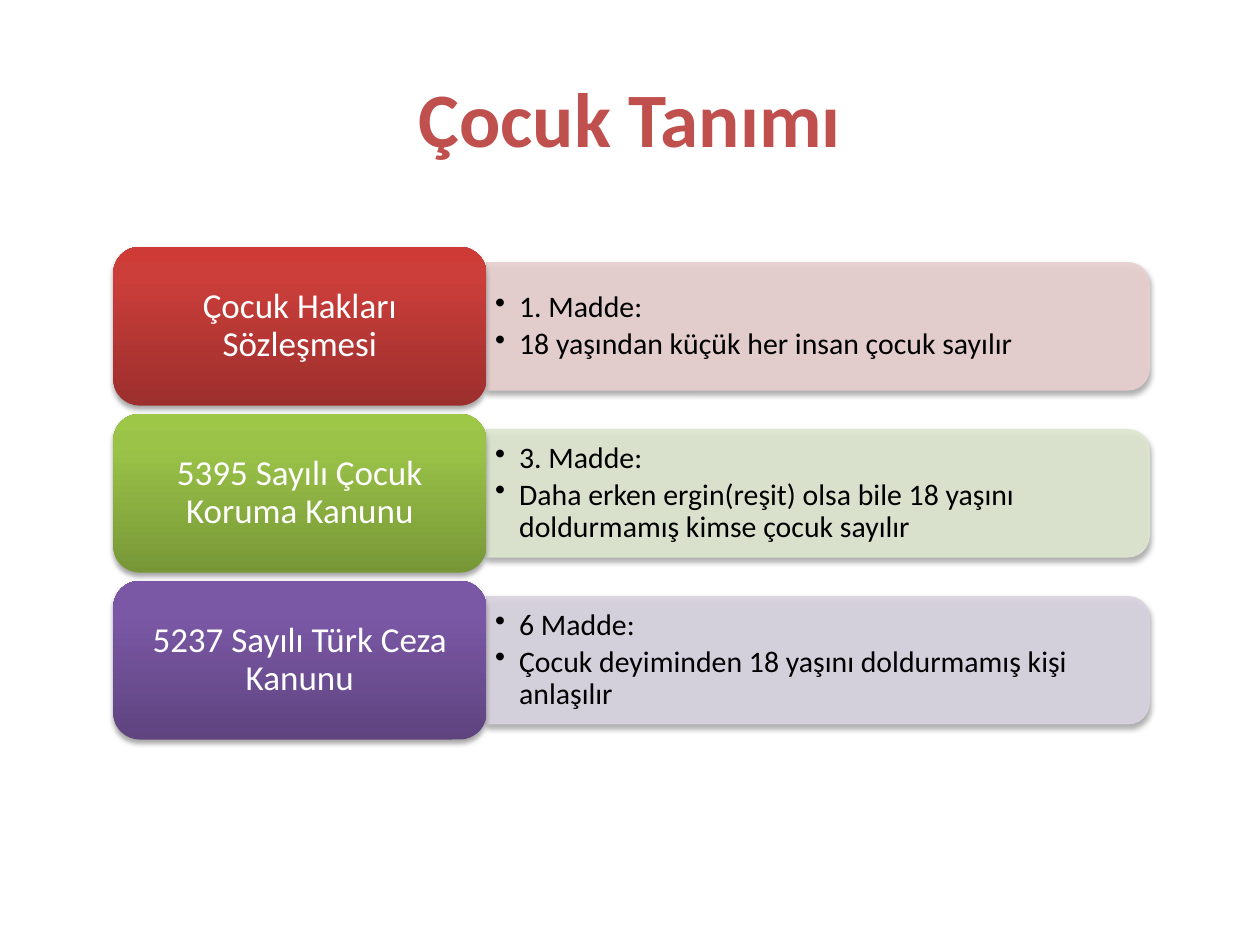
import pptx
import pptx.util
import pptx.dml.color
import pptx.enum.shapes
import pptx.enum.text
import pptx.oxml
import pptx.oxml.ns
import copy
from lxml import etree

Inches, Pt = pptx.util.Inches, pptx.util.Pt
SHAPES = pptx.enum.shapes.MSO_SHAPE
ALIGN = pptx.enum.text.PP_ALIGN
MIDDLE = pptx.enum.text.MSO_ANCHOR.MIDDLE
qn = pptx.oxml.ns.qn

TITLE = "Çocuk Tanımı"
LAWS = [
    {"name": "Çocuk Hakları Sözleşmesi",
     "points": ["1. Madde:", "18 yaşından küçük her insan çocuk sayılır"],
     "gradient": ["9C2F2D", "CB3E3A", "CE3B37"], "tint": "E8D0D0"},
    {"name": "5395 Sayılı Çocuk Koruma Kanunu",
     "points": ["3. Madde:",
                "Daha erken ergin(reşit) olsa bile 18 yaşını doldurmamış kimse çocuk sayılır"],
     "gradient": ["779737", "9BC348", "9DC746"], "tint": "DEE7D1"},
    {"name": "5237 Sayılı Türk Ceza Kanunu",
     "points": ["6 Madde:", "Çocuk deyiminden 18 yaşını doldurmamış kişi anlaşılır"],
     "gradient": ["5F4480", "7B58A6", "7C57A8"], "tint": "D8D3E0"},
]
THEME = {"font": "Calibri", "title": "C0504D", "label": "FFFFFF", "body": "000000",
         "title_size": 44, "label_size": 20, "body_size": 17,
         "stops": [0, 0.8, 1], "tint_alpha": 90}

LEFT, TOP, PITCH = 0.9, 1.96, 1.325
LABEL_W, LABEL_H = 2.96, 1.26
BAR_W, BAR_H = 5.26, 1.01
POINTS_W, POINTS_H = 5.22, 0.91


def rgb(value):
    return pptx.dml.color.RGBColor.from_string(value)


def add_run(para, text, role, bold=None):
    span = para.add_run()
    span.text = text
    span.font.name = THEME["font"]
    span.font.size = Pt(THEME[role + "_size"])
    span.font.color.rgb = rgb(THEME[role])
    span.font.bold = bold


def set_frame(frame, side_inset):
    frame.word_wrap = True
    frame.vertical_anchor = MIDDLE
    frame.margin_left = frame.margin_right = Inches(side_inset)
    frame.margin_top = frame.margin_bottom = Inches(0.04)


def add_shadow(shape):
    shape.shadow.inherit = False
    effects = shape._element.spPr.find(qn("a:effectLst"))
    shadow = etree.SubElement(effects, qn("a:outerShdw"), blurRad=str(Pt(3.1)),
                              dist=str(Pt(1.8)), dir="5400000", rotWithShape="0")
    color = etree.SubElement(shadow, qn("a:srgbClr"), val="000000")
    etree.SubElement(color, qn("a:alpha"), val="35000")


def add_bar(page, middle, tint):
    """Add a bar rounded at its right end: a top-rounded shape turned by 90 degrees."""
    center = LEFT + LABEL_W + BAR_W / 2
    bar = page.shapes.add_shape(SHAPES.ROUND_2_SAME_RECTANGLE,
                                Inches(center - BAR_H / 2), Inches(middle - BAR_W / 2),
                                Inches(BAR_H), Inches(BAR_W))
    bar.rotation = 90
    bar.fill.solid()
    bar.fill.fore_color.rgb = rgb(tint)
    bar.line.color.rgb = rgb(tint)
    bar.line.width = Pt(0.75)
    for color in bar._element.spPr.iter(qn("a:srgbClr")):
        etree.SubElement(color, qn("a:alpha"), val=str(THEME["tint_alpha"] * 1000))
    add_shadow(bar)


def add_points(page, middle, points):
    box = page.shapes.add_textbox(Inches(LEFT + LABEL_W), Inches(middle - POINTS_H / 2),
                                  Inches(POINTS_W), Inches(POINTS_H))
    frame = box.text_frame
    set_frame(frame, 0.07)
    for index, point in enumerate(points):
        para = frame.add_paragraph() if index else frame.paragraphs[0]
        para.level = 1
        para.line_spacing = 0.9
        para.space_after = Pt(2.6)
        props = para._p.get_or_add_pPr()
        props.set("marL", str(Inches(0.19)))
        props.set("indent", str(Inches(-0.19)))
        etree.SubElement(props, qn("a:buChar"), char="•")
        add_run(para, point, "body")


def add_label(page, middle, name, gradient):
    label = page.shapes.add_shape(SHAPES.ROUNDED_RECTANGLE,
                                  Inches(LEFT), Inches(middle - LABEL_H / 2),
                                  Inches(LABEL_W), Inches(LABEL_H))
    label.fill.gradient()
    label.fill.gradient_angle = 90
    stop_list = label._element.spPr.find(".//" + qn("a:gsLst"))
    stop_list.append(copy.deepcopy(stop_list[-1]))
    for stop, position, color in zip(label.fill.gradient_stops, THEME["stops"], gradient):
        stop.position = position
        stop.color.rgb = rgb(color)
    label.line.fill.background()
    add_shadow(label)
    set_frame(label.text_frame, 0.08)
    para = label.text_frame.paragraphs[0]
    para.alignment = ALIGN.CENTER
    para.line_spacing = 0.9
    add_run(para, name, "label")


def main():
    deck = pptx.Presentation()
    deck.slide_width, deck.slide_height = Inches(10), Inches(7.5)
    page = deck.slides.add_slide(deck.slide_layouts[5])

    title = page.shapes.title
    title.left, title.top = Inches(0.5), Inches(0.3)
    title.width, title.height = Inches(9), Inches(1.25)
    title.text_frame.vertical_anchor = MIDDLE
    heading = title.text_frame.paragraphs[0]
    heading.alignment = ALIGN.CENTER
    add_run(heading, TITLE, "title", bold=True)

    for row, law in enumerate(LAWS):
        middle = TOP + LABEL_H / 2 + row * PITCH
        add_bar(page, middle, law["tint"])
        add_points(page, middle, law["points"])
        add_label(page, middle, law["name"], law["gradient"])

    deck.save("out.pptx")


if __name__ == "__main__":
    main()
